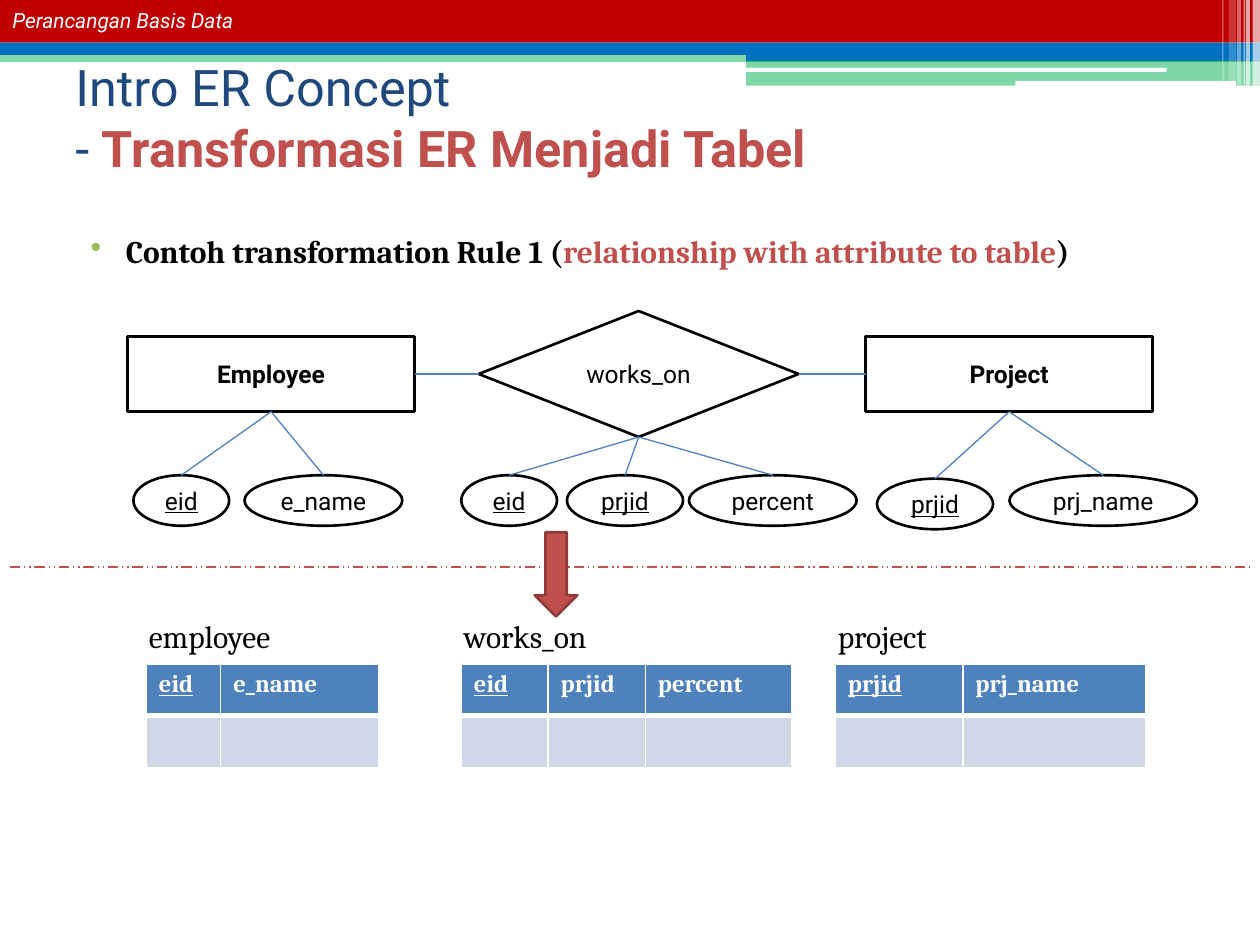
"""Build the slide on turning an ER relationship with attributes into tables."""
from lxml import etree
from pptx import Presentation
from pptx.dml.color import RGBColor
from pptx.enum import dml, shapes, text
from pptx.oxml import ns
from pptx.util import Cm, Pt

WHITE, BLACK = RGBColor(255, 255, 255), RGBColor(0, 0, 0)
RED, BLUE, GREEN = RGBColor(0xC0, 0, 0), RGBColor(0, 0x70, 0xC0), RGBColor(0, 0xB0, 0x50)
NAVY, BRICK = RGBColor(0x1F, 0x49, 0x7D), RGBColor(0xC0, 0x50, 0x4D)
DARK_BRICK, LIME = RGBColor(0x8E, 0x3B, 0x39), RGBColor(0x9B, 0xBB, 0x59)
STEEL, PALE = RGBColor(0x4F, 0x81, 0xBD), RGBColor(0xD0, 0xD8, 0xE8)
SANS, SERIF = "Roboto", "Cambria"
KIND = shapes.MSO_SHAPE

BANDS = [
    (KIND.RECTANGLE, (0, 1.02, 25.4, 0.23), GREEN, 50),
    (KIND.RECTANGLE, (0, 0, 25.4, 0.86), RED, 100),
    (KIND.RECTANGLE, (0, 0.86, 25.4, 0.25), BLUE, 100),
    (KIND.RECTANGLE, (15.04, 0.99, 10.36, 0.25), BLUE, 100),
    (KIND.RECTANGLE, (15.04, 1.22, 10.36, 0.51), GREEN, 50),
    (KIND.ROUNDED_RECTANGLE, (15.01, 1.37, 8.51, 0.08), WHITE, 100),
    (KIND.ROUNDED_RECTANGLE, (20.47, 1.63, 4.45, 0.1), WHITE, 100),
]
STRIPES = [(25.25, 0.15, 1.73, 65), (25.12, 0.08, 1.73, 65), (25.07, 0.03, 1.73, 60),
           (24.94, 0.08, 1.73, 40), (24.77, 0.15, 1.63, 20), (24.64, 0.03, 1.63, 30)]
HEADER = [("Perancangan Basis Data", WHITE, False)]
TITLE = [("Intro ER Concept\v- ", NAVY, False), ("Transformasi ER Menjadi Tabel", BRICK, True)]
RULE = [("Contoh transformation Rule 1 (", BLACK, True),
        ("relationship with attribute to table", BRICK, True), (")", BLACK, True)]

ENTITY_SIZE, ATTRIBUTE_TOP, ATTRIBUTE_HEIGHT = (5.79, 1.52), 9.58, 1.02
NODES = [
    ("Employee", KIND.FLOWCHART_PROCESS, (2.57, 6.78, *ENTITY_SIZE), True,
     [("eid", 2.69, 1.93, 0, True), ("e_name", 4.93, 3.18, 0, False)]),
    ("works_on", KIND.FLOWCHART_DECISION, (9.65, 6.27, 6.45, 2.54), False,
     [("eid", 9.3, 1.93, 0, True), ("prjid", 11.43, 2.34, 0, True),
      ("percent", 13.89, 3.38, 0, False)]),
    ("Project", KIND.FLOWCHART_PROCESS, (17.45, 6.78, *ENTITY_SIZE), True,
     [("prjid", 17.68, 2.34, 0.07, True), ("prj_name", 20.35, 3.78, 0, False)]),
]
TABLES = [
    ("employee", 2.95, 3.1, [("eid", 1.5), ("e_name", 3.18)]),
    ("works_on", 9.3, 3.05, [("eid", 1.75), ("prjid", 1.96), ("percent", 2.95)]),
    ("project", 16.84, 2.36, [("prjid", 2.57), ("prj_name", 3.68)]),
]
LABEL_TOP, TABLE_TOP, ROW_HEIGHT = 12.32, 13.39, 1.04

deck = Presentation()
deck.slide_width, deck.slide_height = Cm(25.4), Cm(19.05)
slide = deck.slides.add_slide(deck.slide_layouts[6])


def style(font, face, size, color, bold=False, underline=False):
    font.name, font.size, font.bold, font.underline = face, Pt(size), bold, underline
    font.color.rgb = color


def add_figure(kind, box, fill, alpha=100, line=None):
    figure = slide.shapes.add_shape(kind, *map(Cm, box))
    figure.shadow.inherit = False
    figure.fill.solid()
    figure.fill.fore_color.rgb = fill
    if alpha < 100:
        color = figure._element.spPr.find(".//" + ns.qn("a:srgbClr"))
        etree.SubElement(color, ns.qn("a:alpha")).set("val", str(alpha * 1000))
    if line is None:
        figure.line.fill.background()
    else:
        figure.line.color.rgb = line
        figure.line.width = Pt(1.5)
    return figure


def add_node(kind, box, name, bold=False, underline=False):
    node = add_figure(kind, box, WHITE, line=BLACK)
    frame = node.text_frame
    frame.margin_left = frame.margin_right = frame.margin_top = frame.margin_bottom = 0
    frame.word_wrap = False
    frame.vertical_anchor = text.MSO_ANCHOR.MIDDLE
    frame.text = name
    frame.paragraphs[0].alignment = text.PP_ALIGN.CENTER
    style(frame.paragraphs[0].runs[0].font, SANS, 14, BLACK, bold, underline)
    return node


def add_line(ends, color):
    line = slide.shapes.add_connector(shapes.MSO_CONNECTOR.STRAIGHT, *map(Cm, ends))
    etree.SubElement(line._element.spPr, ns.qn("a:effectLst"))
    line.line.color.rgb = color
    line.line.width = Pt(0.75)
    return line


def join(start, start_site, end, end_site):
    link = add_line((0, 0, 1, 1), STEEL)
    link.begin_connect(start, start_site)
    link.end_connect(end, end_site)


def add_text(box, pieces, face, size, anchor=text.MSO_ANCHOR.TOP, wrap=True):
    frame = slide.shapes.add_textbox(*map(Cm, box)).text_frame
    frame.word_wrap = wrap
    frame.vertical_anchor = anchor
    paragraph = frame.paragraphs[0]
    for words, color, bold in pieces:
        for number, part in enumerate(words.split("\v")):
            if number:
                paragraph.add_line_break()
            run = paragraph.add_run()
            run.text = part
            style(run.font, face, size, color, bold)
    return paragraph


def add_bullet(paragraph, color):
    properties = paragraph._p.get_or_add_pPr()
    properties.set("marL", str(Cm(1.02)))
    properties.set("indent", str(-Cm(0.71)))
    tint = etree.SubElement(properties, ns.qn("a:buClr"))
    etree.SubElement(tint, ns.qn("a:srgbClr")).set("val", str(color))
    etree.SubElement(properties, ns.qn("a:buChar")).set("char", "•")


def set_borders(cell, bottom):
    properties = cell._tc.get_or_add_tcPr()
    for place, (side, width) in enumerate([("L", 1), ("R", 1), ("T", 1), ("B", bottom)]):
        edge = etree.Element(ns.qn("a:ln" + side), w=str(Pt(width)))
        fill = etree.SubElement(edge, ns.qn("a:solidFill"))
        etree.SubElement(fill, ns.qn("a:srgbClr")).set("val", str(WHITE))
        properties.insert(place, edge)


def add_schema(name, left, label_width, columns):
    add_text((left - 0.2, LABEL_TOP, label_width, 1.02), [(name, BLACK, False)],
             SERIF, 18, wrap=False)
    width = sum(size for _, size in columns)
    schema = slide.shapes.add_table(2, len(columns), Cm(left), Cm(TABLE_TOP),
                                    Cm(width), Cm(2 * ROW_HEIGHT)).table
    for index, (field, size) in enumerate(columns):
        schema.columns[index].width = Cm(size)
        heading, value = schema.cell(0, index), schema.cell(1, index)
        heading.text = field
        style(heading.text_frame.paragraphs[0].runs[0].font, SERIF, 14, WHITE, True, index == 0)
        for cell, fill, bottom in [(heading, STEEL, 3), (value, PALE, 1)]:
            cell.fill.solid()
            cell.fill.fore_color.rgb = fill
            set_borders(cell, bottom)


for kind, box, color, alpha in BANDS:
    add_figure(kind, box, color, alpha)
for left, width, height, alpha in STRIPES:
    add_figure(KIND.RECTANGLE, (left, 0, width, height), WHITE, alpha)

header = add_text((0, -0.08, 22.56, 0.99), HEADER, SANS, 12, text.MSO_ANCHOR.MIDDLE)
header.runs[0].font.italic = True
add_text((1.27, 1.6, 22.86, 1.52), TITLE, SANS, 28.8, text.MSO_ANCHOR.MIDDLE)
add_bullet(add_text((1.27, 4.55, 22.86, 1.81), RULE, SERIF, 18), LIME)

entities = []
for name, kind, box, bold, attributes in NODES:
    entity = add_node(kind, box, name, bold)
    entities.append(entity)
    for field, left, width, drop, is_key in attributes:
        attribute = add_node(KIND.OVAL, (left, ATTRIBUTE_TOP + drop, width, ATTRIBUTE_HEIGHT),
                             field, underline=is_key)
        join(entity, 2, attribute, 0)
for before, after in zip(entities, entities[1:]):
    join(before, 3, after, 1)

divider = add_line((0.2, 11.43, 25.2, 11.43), BRICK)
divider.line.dash_style = dml.MSO_LINE.DASH_DOT_DOT
add_figure(KIND.DOWN_ARROW, (10.78, 10.73, 0.86, 1.7), BRICK, line=DARK_BRICK)
for schema in TABLES:
    add_schema(*schema)

deck.save("out.pptx")
